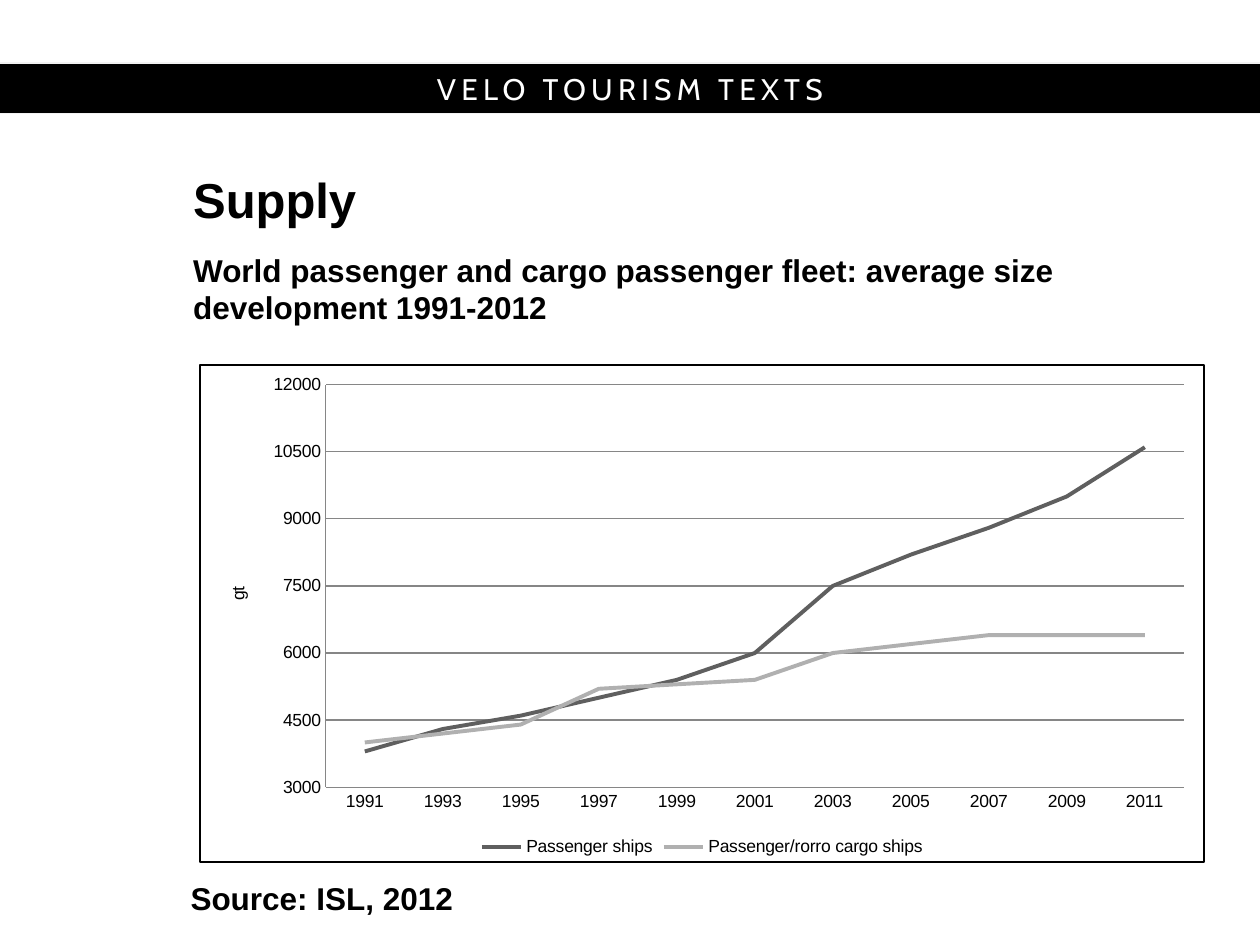
from dataclasses import dataclass

from lxml import etree
from pptx import Presentation
from pptx.chart import data as chart_data
from pptx.dml.color import RGBColor
from pptx.enum import chart as chart_enum, shapes, text
from pptx.oxml import ns, parse_xml
from pptx.util import Pt


@dataclass(frozen=True)
class Theme:
    ink: RGBColor = RGBColor(0, 0, 0)
    paper: RGBColor = RGBColor(255, 255, 255)
    band_edge: RGBColor = RGBColor(0xF2, 0xF2, 0xF2)
    grid: RGBColor = RGBColor(0x86, 0x86, 0x86)
    series: tuple = (RGBColor(0x5F, 0x5F, 0x5F), RGBColor(0xB0, 0xB0, 0xB0))
    font: str = "Arial"
    band_font: str = "Cabin"
    title_size: int = 28
    body_size: int = 18
    band_size: int = 17
    chart_size: int = 10


THEME = Theme()

YEARS = [str(year) for year in range(1991, 2012, 2)]
FLEET = {
    "Passenger ships":
        (3800, 4300, 4600, 5000, 5400, 6000, 7500, 8200, 8800, 9500, 10600),
    "Passenger/rorro cargo ships":
        (4000, 4200, 4400, 5200, 5300, 5400, 6000, 6200, 6400, 6400, 6400),
}
# Plot area as fractions of the chart frame
PLOT_LAYOUT = {"x": 0.125, "y": 0.04, "w": 0.855, "h": 0.81}


def in_points(box):
    return [Pt(length) for length in box]


def style(font, size, color=THEME.ink, name=THEME.font, bold=False):
    font.name, font.size, font.bold = name, Pt(size), bold
    font.color.rgb = color


def add_series_band(slide, box, wording):
    band = slide.shapes.add_shape(shapes.MSO_SHAPE.RECTANGLE, *in_points(box))
    band.shadow.inherit = False
    band.fill.solid()
    band.fill.fore_color.rgb = THEME.ink
    band.line.color.rgb = THEME.band_edge
    band.line.width = Pt(0.75)
    band.text_frame.vertical_anchor = text.MSO_ANCHOR.MIDDLE
    paragraph = band.text_frame.paragraphs[0]
    paragraph.alignment = text.PP_ALIGN.CENTER
    run = paragraph.add_run()
    run.text = wording
    style(run.font, THEME.band_size, THEME.paper, THEME.band_font)
    run.font._element.set("spc", "300")


def add_heading(slide, box, wording, size, line_spacing=1.0,
                anchor=text.MSO_ANCHOR.TOP):
    frame = slide.shapes.add_textbox(*in_points(box)).text_frame
    frame.word_wrap = True
    frame.vertical_anchor = anchor
    paragraph = frame.paragraphs[0]
    paragraph.line_spacing = line_spacing
    run = paragraph.add_run()
    run.text = wording
    style(run.font, size, bold=True)


def set_plot_layout(chart):
    plot_area = chart._chartSpace.chart.plotArea
    for old_layout in plot_area.findall(ns.qn("c:layout")):
        plot_area.remove(old_layout)
    layout = etree.Element(ns.qn("c:layout"))
    manual = etree.SubElement(layout, ns.qn("c:manualLayout"))
    settings = {"layoutTarget": "inner", "xMode": "edge", "yMode": "edge",
                **PLOT_LAYOUT}
    for tag, value in settings.items():
        etree.SubElement(manual, ns.qn(f"c:{tag}")).set("val", str(value))
    plot_area.insert(0, layout)


def set_chart_border(chart):
    chart._chartSpace.chart.addnext(parse_xml(
        f'<c:spPr {ns.nsdecls("c", "a")}><a:noFill/><a:ln w="{Pt(1)}">'
        f'<a:solidFill><a:srgbClr val="{THEME.ink}"/></a:solidFill>'
        '</a:ln></c:spPr>'))


def style_axes(chart):
    sizes, years = chart.value_axis, chart.category_axis
    sizes.minimum_scale, sizes.maximum_scale = 3000, 12000
    sizes.major_unit = 1500
    sizes.has_major_gridlines = True
    for line in (sizes.major_gridlines.format.line, sizes.format.line,
                 years.format.line):
        line.color.rgb = THEME.grid
        line.width = Pt(0.75)
    for axis in (sizes, years):
        axis.major_tick_mark = chart_enum.XL_TICK_MARK.NONE
        axis.minor_tick_mark = chart_enum.XL_TICK_MARK.NONE
        style(axis.tick_labels.font, THEME.chart_size)
    unit = sizes.axis_title.text_frame.paragraphs[0].add_run()
    unit.text = "gt"
    style(unit.font, THEME.chart_size)


def add_fleet_chart(slide, box):
    fleet = chart_data.CategoryChartData(number_format="General")
    fleet.categories = YEARS
    for name, tonnages in FLEET.items():
        fleet.add_series(name, tonnages)
    chart = slide.shapes.add_chart(
        chart_enum.XL_CHART_TYPE.LINE, *in_points(box), fleet).chart
    chart.has_title = False
    style(chart.font, THEME.chart_size)
    chart.has_legend = True
    chart.legend.position = chart_enum.XL_LEGEND_POSITION.BOTTOM
    chart.legend.include_in_layout = False
    style(chart.legend.font, THEME.chart_size)
    plot = chart.plots[0]
    plot.vary_by_categories = False
    for series, color in zip(plot.series, THEME.series):
        series.smooth = False
        series.marker.style = chart_enum.XL_MARKER_STYLE.NONE
        series.format.line.color.rgb = color
        series.format.line.width = Pt(2.25)
    style_axes(chart)
    set_plot_layout(chart)
    set_chart_border(chart)


def main():
    deck = Presentation()
    deck.slide_width, deck.slide_height = Pt(720), Pt(540)
    slide = deck.slides.add_slide(deck.slide_layouts[6])
    add_series_band(slide, (-6, 36, 732, 29), "VELO TOURISM TEXTS")
    add_heading(slide, (103.3, 97, 567, 35), "Supply", THEME.title_size,
                Pt(32), text.MSO_ANCHOR.MIDDLE)
    add_heading(slide, (103.3, 139.7, 567, 29),
                "World passenger and cargo passenger fleet: "
                "average size development 1991-2012", THEME.body_size)
    add_fleet_chart(slide, (114, 208, 574.5, 285))
    add_heading(slide, (101.8, 498.7, 567, 29), "Source: ISL, 2012",
                THEME.body_size)
    deck.save("out.pptx")


if __name__ == "__main__":
    main()
